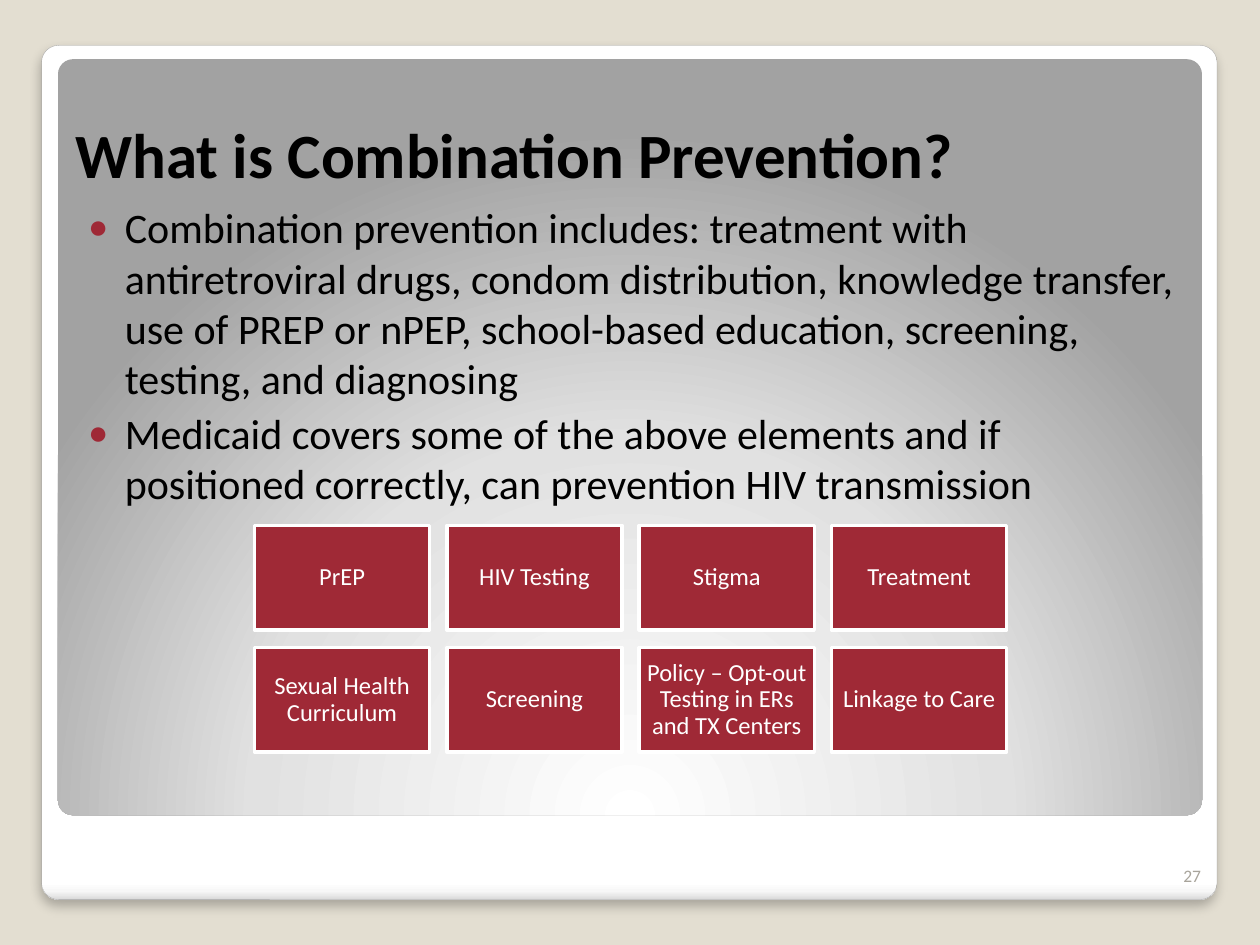
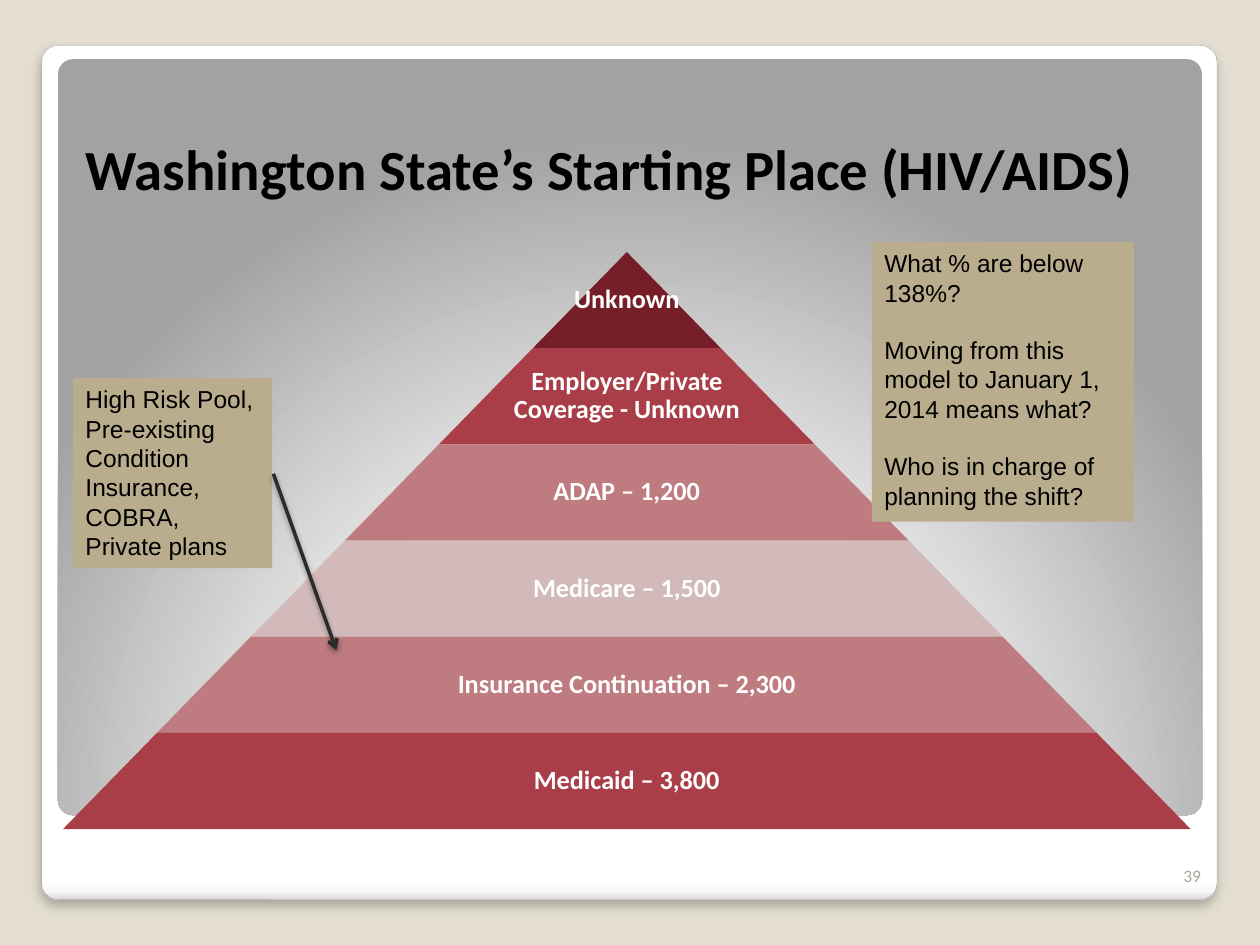
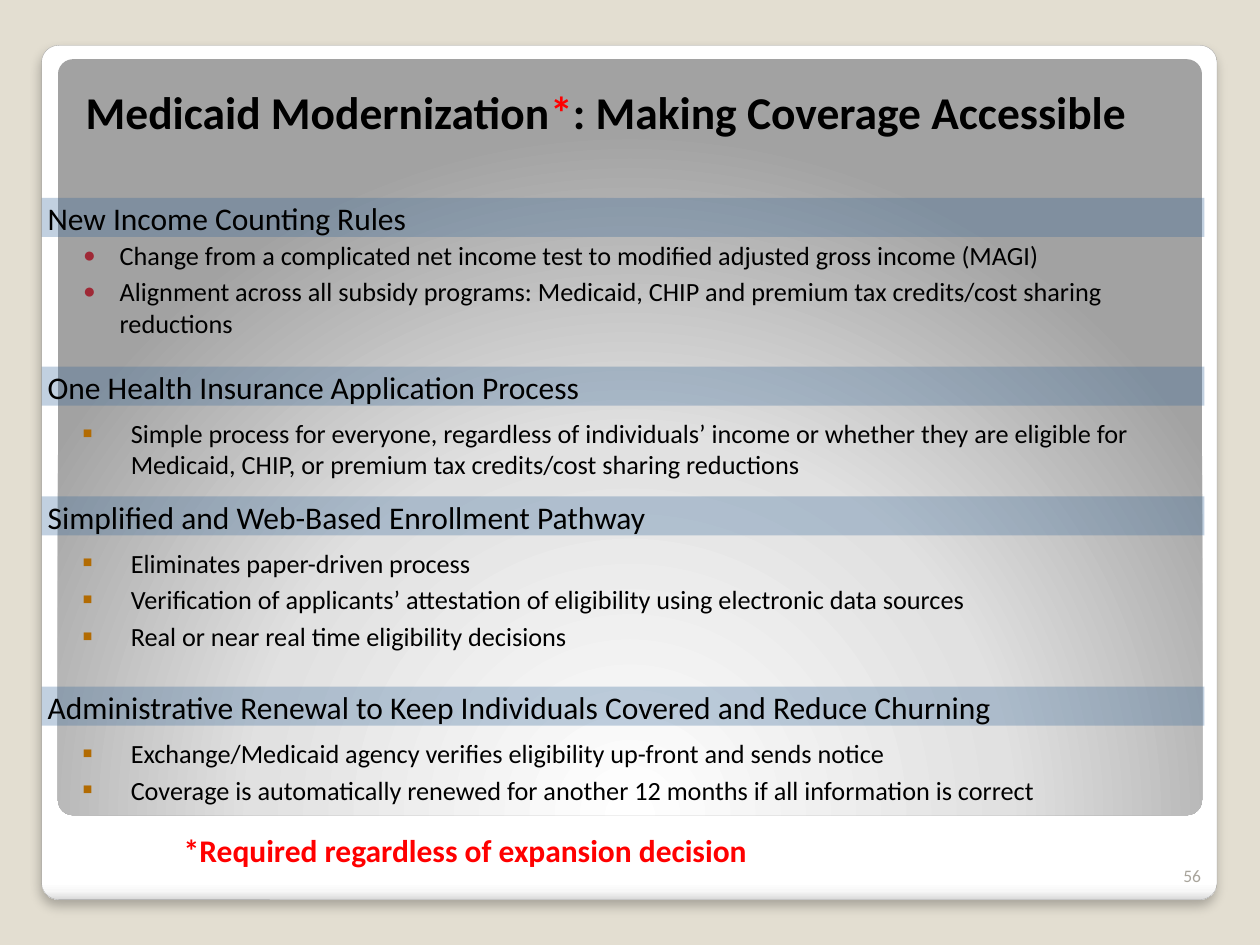
from dataclasses import dataclass
from typing import NamedTuple

from lxml.etree import SubElement
from pptx import Presentation
from pptx.dml.color import RGBColor
from pptx.enum.shapes import MSO_CONNECTOR, MSO_SHAPE
from pptx.enum.text import MSO_ANCHOR, MSO_AUTO_SIZE, PP_ALIGN
from pptx.oxml import parse_xml
from pptx.oxml.ns import nsdecls, qn
from pptx.util import Inches, Pt


# Theme
@dataclass(frozen=True)
class Theme:
    font: str = "Calibri"
    note_font: str = "Arial"
    background: str = "E3DED1"
    white: str = "FFFFFF"
    ink: str = "000000"
    accent: str = "9F2936"
    alert: str = "FF0000"
    band: str = "336699"
    square_bullet: str = "B26B02"
    note: str = "BAAD8D"
    arrow: str = "2C2C2C"
    frame_line: str = "A4A4A4"
    number: str = "A8A49B"
    body_size: float = 24
    heading_size: float = 18
    detail_size: float = 15
    small_size: float = 14
    number_size: float = 10


THEME = Theme()


class Box(NamedTuple):
    left: float
    top: float
    width: float
    height: float


class Span(NamedTuple):
    text: str
    color: str


class Bullet(NamedTuple):
    char: str
    color: str
    percent: int
    indent: float


class Tier(NamedTuple):
    label: str
    color: str


class Section(NamedTuple):
    top: float
    heading: str
    items: list[str]


DOT = Bullet("●", THEME.accent, 80, 0.29)
SQUARE = Bullet("■", THEME.square_bullet, 60, 0.38)
NORMAL_INSETS = (0.1, 0.05, 0.1, 0.05)


# Formatting helpers
def rgb(color: str) -> RGBColor:
    return RGBColor.from_string(color)


def emu(box: Box) -> list[int]:
    return [Inches(value) for value in box]


def add_bullet(para, bullet: Bullet) -> None:
    properties = para._p.get_or_add_pPr()
    properties.set("marL", str(Inches(bullet.indent)))
    properties.set("indent", str(-Inches(bullet.indent)))
    color = SubElement(properties, qn("a:buClr"))
    SubElement(color, qn("a:srgbClr"), val=bullet.color)
    SubElement(properties, qn("a:buSzPct"), val=str(bullet.percent * 1000))
    SubElement(properties, qn("a:buFont"), typeface=THEME.note_font)
    SubElement(properties, qn("a:buChar"), char=bullet.char)


def write(shape, *paragraphs: str | list[Span], size: float, color: str = THEME.ink,
          font: str = THEME.font, bold: bool = False, align=PP_ALIGN.LEFT,
          anchor=MSO_ANCHOR.TOP, insets=NORMAL_INSETS, line_spacing: float = 1.0,
          space_before: float = 0, bullet: Bullet | None = None) -> None:
    frame = shape.text_frame
    frame.word_wrap = True
    frame.auto_size = MSO_AUTO_SIZE.NONE
    frame.vertical_anchor = anchor
    (frame.margin_left, frame.margin_top,
     frame.margin_right, frame.margin_bottom) = map(Inches, insets)
    for index, content in enumerate(paragraphs):
        para = frame.add_paragraph() if index else frame.paragraphs[0]
        para.alignment = align
        para.line_spacing = line_spacing
        para.space_before = Pt(space_before if index or bullet else 0)
        if bullet:
            add_bullet(para, bullet)
        for span in [Span(content, color)] if isinstance(content, str) else content:
            run = para.add_run()
            run.text = span.text
            run.font.name = font
            run.font.size = Pt(size)
            run.font.bold = bold
            run.font.color.rgb = rgb(span.color)


def add_text(page, box: Box, *paragraphs: str, **style) -> None:
    write(page.shapes.add_textbox(*emu(box)), *paragraphs, **style)


def fill_placeholder(page, index: int, box: Box, *paragraphs, **style) -> None:
    holder = page.placeholders[index]
    holder.left, holder.top, holder.width, holder.height = emu(box)
    write(holder, *paragraphs, **style)


def add_block(page, kind, box: Box, color: str, line: str | None = None,
              line_width: float = 1, alpha: int = 100):
    shape = page.shapes.add_shape(kind, *emu(box))
    shape.shadow.inherit = False
    shape.fill.solid()
    shape.fill.fore_color.rgb = rgb(color)
    if alpha < 100:
        tint = shape._element.spPr.find(qn("a:solidFill"))[0]
        SubElement(tint, qn("a:alpha"), val=str(alpha * 1000))
    if line:
        shape.line.color.rgb = rgb(line)
        shape.line.width = Pt(line_width)
    else:
        shape.line.fill.background()
    return shape


def add_shadow(shape, alpha: int, blur: float, distance: float) -> None:
    properties = shape._element.spPr
    effects = properties.find(qn("a:effectLst"))
    if effects is None:
        effects = SubElement(properties, qn("a:effectLst"))
    shadow = SubElement(effects, qn("a:outerShdw"), blurRad=str(Pt(blur)),
                        dist=str(Pt(distance)), dir="5400000", algn="tl", rotWithShape="0")
    color = SubElement(shadow, qn("a:srgbClr"), val=THEME.ink)
    SubElement(color, qn("a:alpha"), val=str(alpha * 1000))


def set_gradient(shape, stops: list[tuple[int, str]], direction: str) -> None:
    stop_xml = "".join(f'<a:gs pos="{position * 1000}"><a:srgbClr val="{color}"/></a:gs>'
                       for position, color in stops)
    gradient = parse_xml(f'<a:gradFill {nsdecls("a")} rotWithShape="1">'
                         f"<a:gsLst>{stop_xml}</a:gsLst>{direction}</a:gradFill>")
    properties = shape._element.spPr
    properties.replace(properties.find(qn("a:solidFill")), gradient)


# Shared master: background and two rounded panels
def dress_master(deck, page) -> None:
    master = deck.slide_master
    master.background.fill.solid()
    master.background.fill.fore_color.rgb = rgb(THEME.background)

    frame = add_block(page, MSO_SHAPE.ROUNDED_RECTANGLE, Box(0.33, 0.36, 9.33, 6.78),
                      THEME.white, THEME.frame_line, 0.16)
    set_gradient(frame, [(0, THEME.white), (98, THEME.white), (99, "F7F7F7"), (100, "DADADA")],
                 '<a:lin ang="5400000" scaled="0"/>')
    add_shadow(frame, alpha=25, blur=6, distance=4)

    panel = add_block(page, MSO_SHAPE.ROUNDED_RECTANGLE, Box(0.46, 0.47, 9.08, 6), THEME.white)
    set_gradient(panel, [(0, THEME.white), (55, "E1E1E1"), (100, "A2A2A2")],
                 '<a:path path="circle"><a:fillToRect l="50000" t="175000" '
                 'r="50000" b="-75000"/></a:path>')

    for position, shape in enumerate((frame, panel), start=2):
        shape.adjustments[0] = 0.02
        master.shapes._spTree.insert(position, shape._element)


def add_title(page, box: Box, title: str | list[Span], size: float,
              anchor=MSO_ANCHOR.BOTTOM) -> None:
    fill_placeholder(page, 0, box, title, size=size, bold=True, anchor=anchor)


def add_number(page, number: int) -> None:
    add_text(page, Box(9.13, 6.68, 0.5, 0.4), str(number), size=THEME.number_size,
             color=THEME.number, align=PP_ALIGN.RIGHT, anchor=MSO_ANCHOR.BOTTOM)


# Slide: combination prevention
ELEMENTS = [
    ["PrEP", "HIV Testing", "Stigma", "Treatment"],
    ["Sexual Health Curriculum", "Screening",
     "Policy – Opt-out Testing in ERs and TX Centers", "Linkage to Care"],
]


def build_prevention(page) -> None:
    add_title(page, Box(0.5, 0.42, 8.95, 1.15), "What is Combination Prevention?", 36)
    fill_placeholder(
        page, 1, Box(0.5, 1.5, 8.95, 2.83),
        "Combination prevention includes: treatment with antiretroviral drugs, condom "
        "distribution, knowledge transfer, use of PREP or nPEP, school-based education, "
        "screening, testing, and diagnosing",
        "Medicaid covers some of the above elements and if positioned correctly, "
        "can prevention HIV transmission",
        size=THEME.body_size, bullet=DOT, space_before=2.5, insets=(0.2, 0.1, 0.1, 0.05))
    add_number(page, 27)

    grid, width, height = Box(2.02, 4.17, 5.97, 1.8), 1.39, 0.83
    column_step = (grid.width - width) / (len(ELEMENTS[0]) - 1)
    row_step = grid.height - height
    for row, labels in enumerate(ELEMENTS):
        for column, label in enumerate(labels):
            box = Box(grid.left + column * column_step, grid.top + row * row_step, width, height)
            tile = add_block(page, MSO_SHAPE.RECTANGLE, box, THEME.accent, THEME.white, 2)
            write(tile, label, size=THEME.small_size, color=THEME.white, line_spacing=0.9,
                  align=PP_ALIGN.CENTER, anchor=MSO_ANCHOR.MIDDLE, insets=(0.06,) * 4)


# Slide: coverage pyramid
TIERS = [
    Tier("Unknown", "761E28"),
    Tier("Employer/Private Coverage - Unknown", "A93E48"),
    Tier("ADAP – 1,200", "BE7B80"),
    Tier("Medicare – 1,500", "D2BABB"),
    Tier("Insurance Continuation – 2,300", "BE7B80"),
    Tier("Medicaid – 3,800", "A93E48"),
]


def add_pyramid(page, area: Box) -> None:
    height = area.height / len(TIERS)
    center = area.left + area.width / 2
    for index, tier in enumerate(TIERS):
        width = area.width * (index + 1) / len(TIERS)
        top = area.top + index * height
        layer = add_block(page, MSO_SHAPE.TRAPEZOID,
                          Box(center - width / 2, top, width, height), tier.color)
        layer.adjustments[0] = area.width / 2 / area.height
        label_width = width * 0.65 if index else width
        add_text(page, Box(center - label_width / 2, top, label_width, height), tier.label,
                 size=THEME.detail_size, color=THEME.white, bold=True, line_spacing=0.9,
                 align=PP_ALIGN.CENTER, anchor=MSO_ANCHOR.MIDDLE, insets=(0.02,) * 4)


def add_note(page, box: Box, *paragraphs: str, space_before: float = 0) -> None:
    note = add_block(page, MSO_SHAPE.RECTANGLE, box, THEME.note)
    write(note, *paragraphs, size=THEME.small_size, font=THEME.note_font,
          space_before=space_before)


def build_pyramid(page) -> None:
    add_title(page, Box(0.58, 0.5, 8.95, 1.15),
              "Washington State’s Starting Place (HIV/AIDS)", 32.4)
    add_pyramid(page, Box(0.5, 2, 8.95, 4.58))
    add_number(page, 39)
    add_note(page, Box(0.58, 3, 1.58, 1.51), "High Risk Pool,",
             "Pre-existing Condition Insurance,", "COBRA, Private plans")

    arrow = page.shapes.add_connector(MSO_CONNECTOR.STRAIGHT, Inches(2.17), Inches(3.76),
                                      Inches(2.67), Inches(5.16))
    arrow.line.color.rgb = rgb(THEME.arrow)
    arrow.line.width = Pt(2)
    SubElement(arrow.line._get_or_add_ln(), qn("a:tailEnd"), type="arrow")
    add_shadow(arrow, alpha=38, blur=3.1, distance=1.6)

    add_note(page, Box(6.92, 1.92, 2.08, 2.22), "What % are below 138%?",
             "Moving from this model to January 1, 2014 means what?",
             "Who is in charge of planning the shift?", space_before=16)


# Slide: Medicaid modernization
SECTIONS = [
    Section(1.57, "New Income Counting Rules", [
        "Change from a complicated net income test to modified adjusted gross income (MAGI)",
        "Alignment across all subsidy programs: Medicaid, CHIP and premium tax "
        "credits/cost sharing reductions"]),
    Section(2.91, "One Health Insurance Application Process", [
        "Simple process for everyone, regardless of individuals’ income or whether they are "
        "eligible for Medicaid, CHIP, or premium tax credits/cost sharing reductions"]),
    Section(3.94, "Simplified and Web-Based Enrollment Pathway", [
        "Eliminates paper-driven process",
        "Verification of applicants’ attestation of eligibility using electronic data sources",
        "Real or near real time eligibility decisions"]),
    Section(5.45, "Administrative Renewal to Keep Individuals Covered and Reduce Churning", [
        "Exchange/Medicaid agency verifies eligibility up-front and sends notice",
        "Coverage is automatically renewed for another 12 months if all information is correct"]),
]


def build_modernization(page) -> None:
    add_title(page, Box(0.58, 0.62, 9.11, 1.11),
              [Span("Medicaid Modernization", THEME.ink), Span("*", THEME.alert),
               Span(": Making Coverage Accessible", THEME.ink)], 26, MSO_ANCHOR.TOP)
    for index, section in enumerate(SECTIONS):
        add_block(page, MSO_SHAPE.RECTANGLE, Box(0.33, section.top, 9.23, 0.31),
                  THEME.band, alpha=30)
        add_text(page, Box(0.28, section.top - 0.04, 8.83, 0.4), section.heading,
                 size=THEME.heading_size)
        if index:
            add_text(page, Box(0.56, section.top + 0.35, 9, 0.52), *section.items,
                     size=THEME.detail_size, bullet=SQUARE, space_before=3)
        else:
            fill_placeholder(page, 1, Box(0.56, section.top + 0.28, 9, 1.04), *section.items,
                             size=THEME.detail_size, bullet=DOT, space_before=2.5)
    add_text(page, Box(1.36, 6.55, 7.88, 0.4), "*Required regardless of expansion decision",
             size=THEME.heading_size, color=THEME.alert, bold=True)
    add_number(page, 56)


def main() -> None:
    deck = Presentation()
    deck.slide_width, deck.slide_height = Inches(10), Inches(7.5)
    title_and_body, title_only = deck.slide_layouts[1], deck.slide_layouts[5]
    prevention = deck.slides.add_slide(title_and_body)
    dress_master(deck, prevention)
    build_prevention(prevention)
    build_pyramid(deck.slides.add_slide(title_only))
    build_modernization(deck.slides.add_slide(title_and_body))
    deck.save("out.pptx")


if __name__ == "__main__":
    main()
